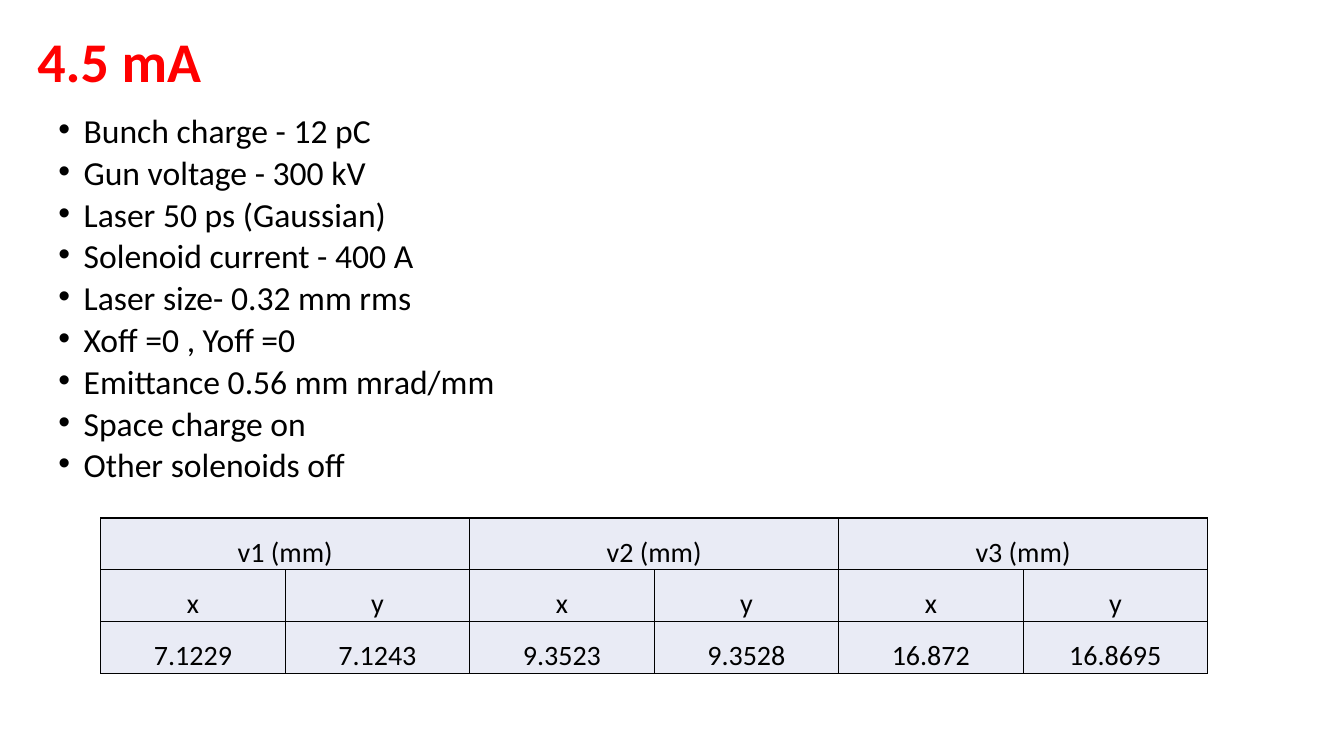
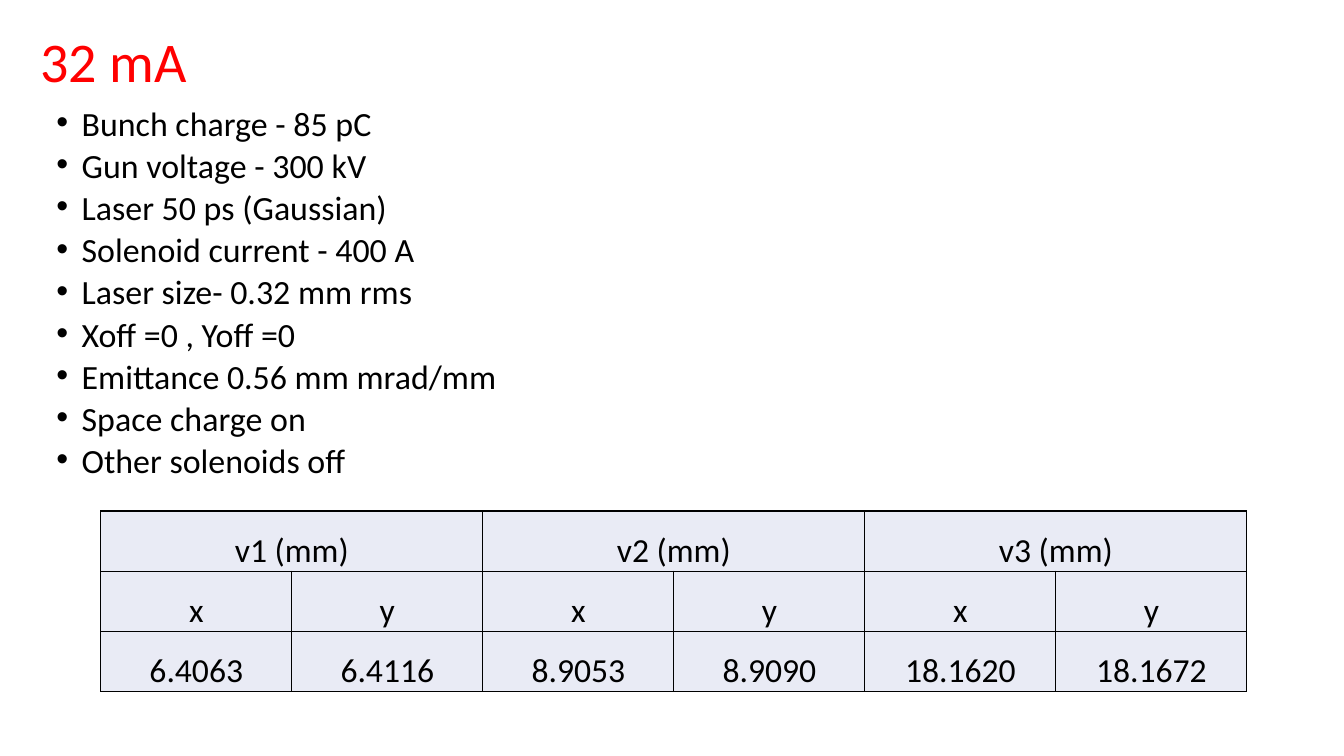
"""Build two slides of beam settings with tables of measured sizes."""
from dataclasses import dataclass

import lxml.etree
import pptx
import pptx.dml.color
import pptx.enum.text
import pptx.oxml.ns
import pptx.presentation
import pptx.shapes.base
import pptx.slide
import pptx.table
import pptx.text.text
import pptx.util

COLORS = {"title": "FF0000", "text": "000000", "cell": "E9EBF5", "border": "000000"}
FONT = "Calibri"
SLIDE_WIDTH = pptx.util.Inches(13.33)
SLIDE_HEIGHT = pptx.util.Inches(7.5)
GRID_COLUMNS = GRID_ROWS = 100
TITLE_SIZE = 40
BULLET_INDENT = pptx.util.Inches(0.25)
CELL_MARGIN = pptx.util.Inches(0.01)
STATIONS = ("v1 (mm)", "v2 (mm)", "v3 (mm)")
AXES = ("x", "y")
COMMON_SETTINGS = (
    "Gun voltage - 300 kV",
    "Laser 50 ps (Gaussian)",
    "Solenoid current - 400 A",
    "Laser size- 0.32 mm rms",
    "Xoff =0 , Yoff =0",
    "Emittance 0.56 mm mrad/mm",
    "Space charge on",
    "Other solenoids off",
)


@dataclass(frozen=True)
class Area:
    """A rectangle in columns and rows of the slide grid."""

    column: float
    row: float
    columns: float
    rows: float

    def lengths(self) -> tuple[int, int, int, int]:
        """Return left, top, width and height in slide units."""
        column_width = SLIDE_WIDTH / GRID_COLUMNS
        row_height = SLIDE_HEIGHT / GRID_ROWS
        return (
            round(self.column * column_width),
            round(self.row * row_height),
            round(self.columns * column_width),
            round(self.rows * row_height),
        )


@dataclass(frozen=True)
class BeamCase:
    """The content and layout of one beam current."""

    current: str
    bold_title: bool
    title_area: Area
    charge: str
    list_area: Area
    list_size: float
    values: tuple[str, ...]
    table_area: Area
    table_size: float


CASES = (
    BeamCase(
        "4.5 mA", True, Area(2.03, 0, 86.25, 17),
        "Bunch charge - 12 pC", Area(3.6, 15.33, 86.25, 52), 24,
        ("7.1229", "7.1243", "9.3523", "9.3528", "16.872", "16.8695"),
        Area(7.5, 68.53, 82.35, 20.53), 20,
    ),
    BeamCase(
        "32 mA", False, Area(2.25, 0, 86.25, 17),
        "Bunch charge - 85 pC", Area(3.45, 14.4, 92.3, 52), 24.2,
        ("6.4063", "6.4116", "8.9053", "8.9090", "18.1620", "18.1672"),
        Area(7.5, 67.6, 85.28, 23.87), 24,
    ),
)


def place(shape: pptx.shapes.base.BaseShape, area: Area) -> None:
    """Move a shape to an area of the grid."""
    shape.left, shape.top, shape.width, shape.height = area.lengths()


def style_font(
    paragraph: pptx.text.text._Paragraph, size: float, color: str, bold: bool = False
) -> None:
    """Set the font of a paragraph."""
    font = paragraph.font
    font.name = FONT
    font.size = pptx.util.Pt(size)
    font.bold = bold
    font.color.rgb = pptx.dml.color.RGBColor.from_string(COLORS[color])


def fill_title(slide: pptx.slide.Slide, case: BeamCase) -> None:
    """Write the beam current in the title placeholder."""
    title = slide.shapes.title
    place(title, case.title_area)
    frame = title.text_frame
    frame.text = case.current
    frame.auto_size = pptx.enum.text.MSO_AUTO_SIZE.NONE
    frame.vertical_anchor = pptx.enum.text.MSO_ANCHOR.MIDDLE
    paragraph = frame.paragraphs[0]
    paragraph.alignment = pptx.enum.text.PP_ALIGN.LEFT
    paragraph.line_spacing = 0.9
    style_font(paragraph, TITLE_SIZE, "title", case.bold_title)


def add_bullet(paragraph: pptx.text.text._Paragraph) -> None:
    """Give a paragraph a bullet with a hanging indent."""
    properties = paragraph._p.get_or_add_pPr()
    properties.set("marL", str(BULLET_INDENT))
    properties.set("indent", str(-BULLET_INDENT))
    bullet_font = lxml.etree.SubElement(properties, pptx.oxml.ns.qn("a:buFont"))
    bullet_font.set("typeface", "Arial")
    bullet = lxml.etree.SubElement(properties, pptx.oxml.ns.qn("a:buChar"))
    bullet.set("char", "•")


def fill_settings(slide: pptx.slide.Slide, case: BeamCase) -> None:
    """List the beam settings in the body placeholder."""
    body = slide.placeholders[1]
    place(body, case.list_area)
    frame = body.text_frame
    frame.text = "\n".join((case.charge, *COMMON_SETTINGS))
    frame.auto_size = pptx.enum.text.MSO_AUTO_SIZE.NONE
    for index, paragraph in enumerate(frame.paragraphs):
        add_bullet(paragraph)
        paragraph.line_spacing = 0.7
        paragraph.space_before = pptx.util.Pt(9.7 if index else 0)
        style_font(paragraph, case.list_size, "text")


def add_borders(cell: pptx.table._Cell) -> None:
    """Draw a thin line on each side of a cell."""
    properties = cell._tc.get_or_add_tcPr()
    for side in ("lnL", "lnR", "lnT", "lnB"):
        line = lxml.etree.SubElement(properties, pptx.oxml.ns.qn(f"a:{side}"))
        line.set("w", str(pptx.util.Pt(1)))
        fill = lxml.etree.SubElement(line, pptx.oxml.ns.qn("a:solidFill"))
        color = lxml.etree.SubElement(fill, pptx.oxml.ns.qn("a:srgbClr"))
        color.set("val", COLORS["border"])


def style_cell(cell: pptx.table._Cell, size: float) -> None:
    """Set the borders, fill, margins and text style of a cell."""
    add_borders(cell)
    cell.fill.solid()
    cell.fill.fore_color.rgb = pptx.dml.color.RGBColor.from_string(COLORS["cell"])
    cell.margin_left = cell.margin_right = cell.margin_top = CELL_MARGIN
    cell.margin_bottom = 0
    cell.vertical_anchor = pptx.enum.text.MSO_ANCHOR.BOTTOM
    paragraph = cell.text_frame.paragraphs[0]
    paragraph.alignment = pptx.enum.text.PP_ALIGN.CENTER
    style_font(paragraph, size, "text")


def add_size_table(slide: pptx.slide.Slide, case: BeamCase) -> None:
    """Add the table of beam sizes at each station."""
    column_count = len(STATIONS) * len(AXES)
    table = slide.shapes.add_table(3, column_count, *case.table_area.lengths()).table
    table.first_row = table.horz_banding = False
    for index, station in enumerate(STATIONS):
        first = index * len(AXES)
        table.cell(0, first).merge(table.cell(0, first + len(AXES) - 1))
        table.cell(0, first).text = station
    for column, value in enumerate(case.values):
        table.cell(1, column).text = AXES[column % len(AXES)]
        table.cell(2, column).text = value
    for cell in table.iter_cells():
        style_cell(cell, case.table_size)


def add_case_slide(
    presentation: pptx.presentation.Presentation, case: BeamCase
) -> None:
    """Add the slide of one beam current."""
    slide = presentation.slides.add_slide(presentation.slide_layouts[1])
    fill_title(slide, case)
    fill_settings(slide, case)
    add_size_table(slide, case)


def main() -> None:
    """Build and save the presentation."""
    presentation = pptx.Presentation()
    presentation.slide_width = SLIDE_WIDTH
    presentation.slide_height = SLIDE_HEIGHT
    for case in CASES:
        add_case_slide(presentation, case)
    presentation.save("out.pptx")


if __name__ == "__main__":
    main()
